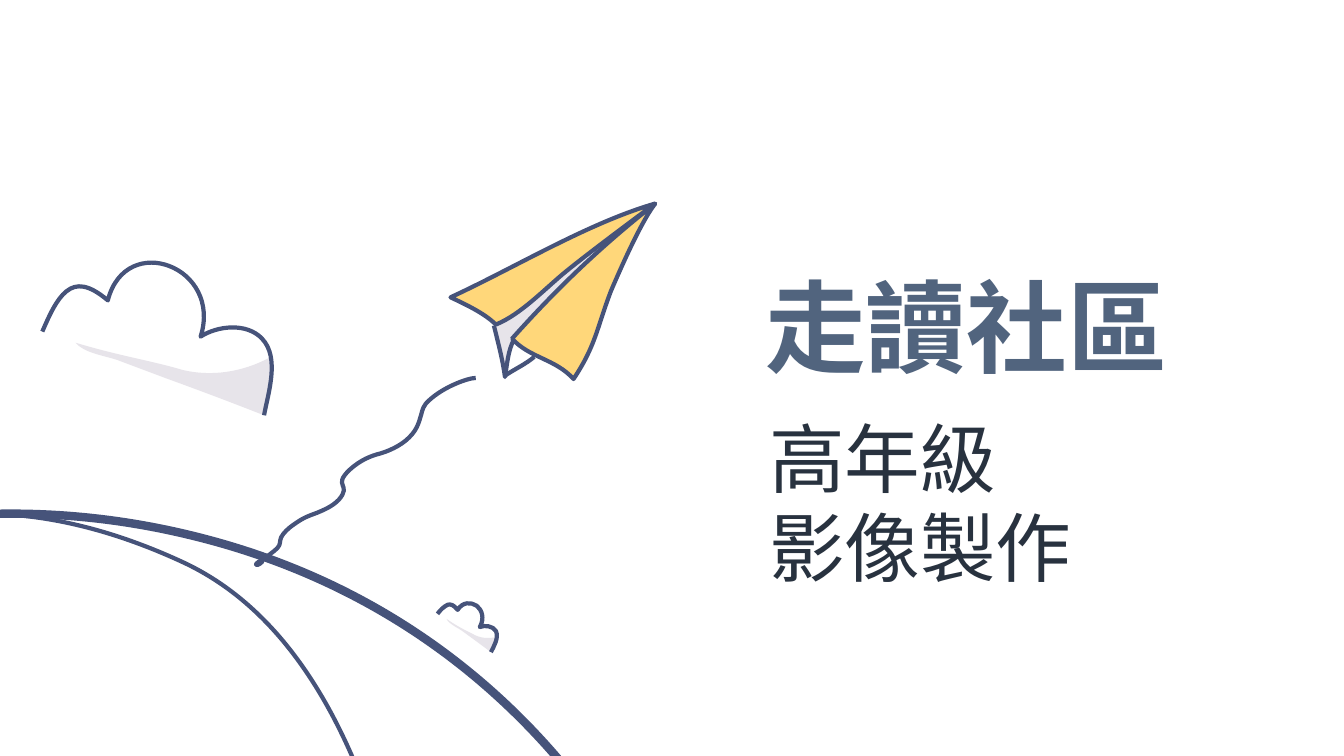
from lxml import etree
from pptx import Presentation
from pptx.dml.color import RGBColor
from pptx.enum import text
from pptx.oxml import ns
from pptx.util import Pt

FONT = "Noto Sans CJK JP"
INK, YELLOW, SHADE = "46537A", "FFD77A", "E7E4EA"
GRID = 72  # points per drawing unit
SAMPLES = 24

# An outline is a start point followed by its segments:
# two numbers for a straight line, six for a cubic curve.
HILL = [(6.49, 17.44), (8.7, 13.19, 7.28, 6.67, 1.97, 5.33),
        (-3.61, 3.91, -9.01, 9.2, -8.29, 14.56),
        (-7.35, 21.4, 1.33, 24.09, 5.68, 18.68),
        (5.99, 18.29, 6.26, 17.88, 6.49, 17.44)]
HILL_CONTOUR = [(0.57, 21.23), (4.38, 19.99, 4.71, 13.79, 4.24, 10.47),
                (4.01, 8.83, 3.51, 6.37, 1.82, 5.58),
                (-3.5, 3.11, -5.71, 10.71, -5.37, 14.33),
                (-5.12, 17.07, -2.92, 22.36, 0.57, 21.23)]
TRAIL_END = [(2.54, 5.6), (2.54, 5.59, 2.58, 5.56, 2.6, 5.56),
             (2.63, 5.56, 2.54, 5.63, 2.54, 5.6)]
TRAIL = [(4.72, 3.75), (4.64, 3.75, 4.4, 3.84, 4.26, 3.97),
         (4.2, 4.02, 4.19, 4.07, 4.18, 4.11),
         (4.16, 4.17, 4.15, 4.25, 4.06, 4.34),
         (3.97, 4.43, 3.84, 4.48, 3.77, 4.5),
         (3.69, 4.52, 3.58, 4.56, 3.47, 4.66),
         (3.29, 4.83, 3.5, 4.8, 3.36, 4.96),
         (3.29, 5.03, 3.21, 5.06, 3.14, 5.09),
         (3.06, 5.12, 3.02, 5.13, 2.92, 5.2),
         (2.86, 5.24, 2.81, 5.29, 2.79, 5.33),
         (2.77, 5.37, 2.79, 5.4, 2.75, 5.44),
         (2.72, 5.47, 2.65, 5.52, 2.61, 5.55)]
FOLD = [(5.1, 3.37), (5.04, 3.47, 5.02, 3.62, 5.01, 3.73),
        (4.99, 3.57, 4.93, 3.39, 4.9, 3.23), (5.93, 2.44), (5.1, 3.37)]
RIGHT_WING = [(6.5, 2.02), (5.94, 2.46, 5.5, 2.89, 5.08, 3.36),
              (5.25, 3.55, 5.51, 3.56, 5.69, 3.76),
              (5.91, 3.43, 5.92, 3.26, 6.06, 2.89),
              (6.15, 2.68, 6.36, 2.2, 6.5, 2.02)]
LEFT_WING = [(5.62, 2.69), (5.41, 2.86, 5.17, 3.12, 4.92, 3.22),
             (4.81, 3.11, 4.62, 3.02, 4.47, 2.95),
             (5.1, 2.66, 5.84, 2.21, 6.5, 2.02),
             (6.5, 2.02, 5.89, 2.47, 5.62, 2.69)]
KEEL = [(5.1, 3.37), (5.04, 3.47, 5.03, 3.63, 5.01, 3.74),
        (4.99, 3.58, 4.94, 3.39, 4.9, 3.23)]
KEEL_EDGE = [(5.3, 3.54), (5.22, 3.61, 5.11, 3.66, 5.02, 3.72)]
CLOUD_SHADE = [(0.75, 3.4), (1.18, 3.53, 1.51, 3.58, 1.81, 3.67),
               (2.1, 3.74, 2.41, 3.69, 2.67, 3.55),
               (2.73, 3.67, 2.62, 4.12, 2.62, 4.12),
               (2.29, 3.99, 1.97, 3.87, 1.64, 3.75),
               (1.48, 3.69, 1.32, 3.63, 1.16, 3.57),
               (1.04, 3.53, 0.83, 3.5, 0.75, 3.4)]
CLOUD = [(0.42, 3.29), (0.49, 3.13, 0.56, 2.97, 0.66, 2.89),
         (0.76, 2.81, 0.88, 2.82, 1.07, 2.98),
         (1.16, 2.63, 1.45, 2.55, 1.68, 2.64),
         (1.92, 2.73, 2.1, 3, 1.99, 3.34),
         (2.16, 3.23, 2.45, 3.2, 2.6, 3.36),
         (2.78, 3.55, 2.66, 3.9, 2.62, 4.12)]
SMALL_SHADE = [(4.43, 6.14), (4.53, 6.21, 4.61, 6.25, 4.69, 6.29),
               (4.76, 6.33, 4.84, 6.34, 4.92, 6.32),
               (4.93, 6.35, 4.87, 6.47, 4.87, 6.47),
               (4.79, 6.41, 4.71, 6.35, 4.64, 6.3),
               (4.6, 6.27, 4.56, 6.24, 4.52, 6.22),
               (4.49, 6.2, 4.44, 6.17, 4.43, 6.14)]
SMALL_CLOUD = [(4.34, 6.09), (4.37, 6.05, 4.4, 6.02, 4.44, 6),
               (4.47, 5.99, 4.5, 6, 4.54, 6.05),
               (4.59, 5.97, 4.67, 5.97, 4.73, 6.01),
               (4.78, 6.05, 4.81, 6.13, 4.76, 6.22),
               (4.81, 6.2, 4.89, 6.21, 4.92, 6.26),
               (4.95, 6.33, 4.9, 6.41, 4.87, 6.47)]

# Each group lists (outline, fill, line width).
GROUPS = [
    [(HILL, None, 6), (HILL_CONTOUR, None, 3)],
    [(TRAIL_END, None, 3), (TRAIL, None, 3)],
    [(FOLD, SHADE, 0), (RIGHT_WING, YELLOW, 3), (LEFT_WING, YELLOW, 3),
     (KEEL, None, 3), (KEEL_EDGE, None, 3)],
    [(CLOUD_SHADE, SHADE, 0), (CLOUD, None, 3)],
    [(SMALL_SHADE, SHADE, 0), (SMALL_CLOUD, None, 3)],
]


def color(value):
    return RGBColor.from_string(value)


def set_all(target, values):
    for name, value in values.items():
        setattr(target, name, value)


def bounds(outline):
    """Return the corners (left, top) and (right, bottom) that the curves reach."""
    points = [outline[0]]
    for segment in outline[1:]:
        controls = (points[-1], segment[:2], segment[-4:-2], segment[-2:])
        if len(segment) == 2:
            points.append(segment)
            continue
        for step in range(1, SAMPLES + 1):
            t = step / SAMPLES
            weights = ((1 - t) ** 3, 3 * t * (1 - t) ** 2, 3 * t * t * (1 - t), t ** 3)
            points.append(tuple(sum(weight * point[axis] for weight, point in zip(weights, controls))
                                for axis in (0, 1)))
    return [tuple(Pt(GRID * limit(values)) for values in zip(*points)) for limit in (min, max)]


def draw_curves(contour, outline, left, top):
    """Put the outline's segments into an a:path element."""
    for element in list(contour):
        contour.remove(element)
    for index, segment in enumerate(outline):
        tag = "a:moveTo" if index == 0 else "a:lnTo" if len(segment) == 2 else "a:cubicBezTo"
        command = etree.SubElement(contour, ns.qn(tag))
        for x, y in zip(segment[::2], segment[1::2]):
            point = etree.SubElement(command, ns.qn("a:pt"))
            point.set("x", str(int(Pt(GRID * x) - left)))
            point.set("y", str(int(Pt(GRID * y) - top)))
    if outline[0] == outline[-1][-2:]:
        etree.SubElement(contour, ns.qn("a:close"))


def add_outline(shapes, outline, fill, line_width):
    start, end = bounds(outline)
    builder = shapes.build_freeform(*start)
    builder.add_line_segments([end], close=False)
    shape = builder.convert_to_shape()
    draw_curves(shape._element.find(".//" + ns.qn("a:path")), outline, *start)
    shape.shadow.inherit = False
    if fill:
        shape.fill.solid()
        shape.fill.fore_color.rgb = color(fill)
    else:
        shape.fill.background()
    if line_width:
        shape.line.color.rgb = color(INK)
        shape.line.width = Pt(line_width)
    else:
        shape.line.fill.background()


def fill_placeholder(shape, box, lines, top_margin, spacing, font):
    left, top, width, height = map(Pt, box)
    set_all(shape, {"left": left, "top": top, "width": width, "height": height})
    frame = shape.text_frame
    frame.text = "\n".join(lines)
    set_all(frame, {"word_wrap": False, "auto_size": text.MSO_AUTO_SIZE.NONE,
                    "vertical_anchor": text.MSO_ANCHOR.TOP, "margin_top": Pt(top_margin)})
    for paragraph in frame.paragraphs:
        set_all(paragraph, {"alignment": text.PP_ALIGN.LEFT, "space_before": Pt(0),
                            "line_spacing": Pt(spacing)})
        for run in paragraph.runs:
            set_all(run.font, {"name": FONT, "size": Pt(font["size"]), "bold": font["bold"]})
            run.font.color.rgb = color(font["color"])
            east_asian = etree.SubElement(run._r.get_or_add_rPr(), ns.qn("a:ea"))
            east_asian.set("typeface", FONT)


def main():
    presentation = Presentation()
    set_all(presentation, {"slide_width": Pt(960), "slide_height": Pt(540)})
    slide = presentation.slides.add_slide(presentation.slide_layouts[0])
    for outlines in GROUPS:
        group = slide.shapes.add_group_shape()
        for outline, fill, line_width in outlines:
            add_outline(group.shapes, outline, fill, line_width)
    fill_placeholder(slide.shapes.title, (539.3, 180, 305.3, 94.3), ["走讀社區"], 10.8, 84.8,
                     {"size": 72, "bold": True, "color": "51647E"})
    fill_placeholder(slide.placeholders[1], (542.2, 286.6, 232.6, 138.2), ["高年級", "影像製作"],
                     9, 63.6, {"size": 54, "bold": False, "color": "28323F"})
    presentation.save("out.pptx")


if __name__ == "__main__":
    main()
